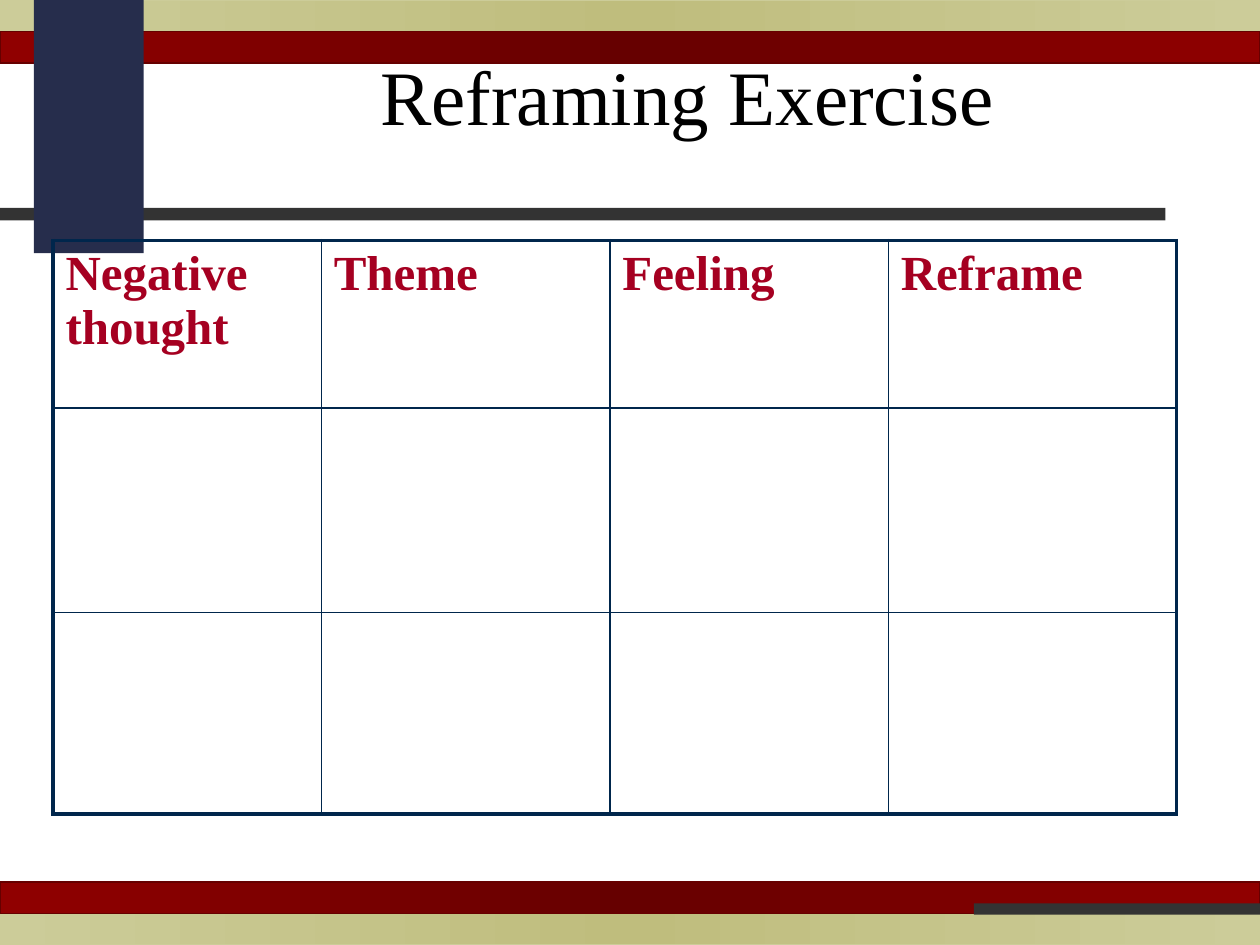
from copy import deepcopy
from lxml import etree
from pptx import Presentation
from pptx.dml.color import RGBColor
from pptx.enum.shapes import MSO_SHAPE
from pptx.enum.text import MSO_ANCHOR
from pptx.oxml.ns import qn
from pptx.util import Inches, Pt

RECTANGLE = MSO_SHAPE.RECTANGLE
BOTTOM = MSO_ANCHOR.BOTTOM
BLACK = RGBColor(0x00, 0x00, 0x00)
CHARCOAL = RGBColor(0x33, 0x33, 0x33)
NAVY = RGBColor(0x26, 0x2D, 0x4C)
BORDER = RGBColor(0x00, 0x26, 0x4C)
CRIMSON = RGBColor(0xA5, 0x00, 0x21)
SAND = RGBColor(0xCC, 0xCC, 0x99)
OLIVE = RGBColor(0xBF, 0xBD, 0x7D)
RED = RGBColor(0x90, 0x00, 0x00)
MAROON = RGBColor(0x66, 0x00, 0x00)

WIDTH, HEIGHT = 10, 7.5
BAND = HEIGHT / 30
FONT = "Times New Roman"
TITLE = "Reframing Exercise"
HEADINGS = ["Negative thought", "Theme", "Feeling", "Reframe"]
COLUMNS = [2.13, 2.29, 2.21, 2.29]
ROWS = [1.33, 1.62, 1.6]
TABLE_LEFT, TABLE_TOP = 0.42, 1.91
OUTER, INNER = 2.25, 1

BANDS = [
    (0, SAND, OLIVE, SAND),
    (BAND, RED, MAROON, MAROON),
    (HEIGHT - BAND, SAND, OLIVE, SAND),
    (HEIGHT - 2 * BAND, RED, MAROON, MAROON),
]
BLOCKS = [
    (0, 1.65, 9.25, 0.1, CHARCOAL),
    (0.27, 0, 0.87, 2.01, NAVY),
    (7.73, 7.17, 2.27, 0.09, CHARCOAL),
]


def add_rectangle(page, left, top, width, height):
    shape = page.shapes.add_shape(
        RECTANGLE, Inches(left), Inches(top), Inches(width), Inches(height))
    shape.shadow.inherit = False
    return shape


def add_band(page, top, edge, middle, outline):
    band = add_rectangle(page, 0, top, WIDTH, BAND)
    band.fill.gradient()
    band.fill.gradient_angle = 0
    stop_list = band._element.spPr.find(qn("a:gradFill")).find(qn("a:gsLst"))
    stop_list.insert(1, deepcopy(stop_list[0]))
    for stop, position, color in zip(
            band.fill.gradient_stops, (0, 0.5, 1), (edge, middle, edge)):
        stop.position = position
        stop.color.rgb = color
    band.line.color.rgb = outline
    band.line.width = Pt(0.75)


def write(frame, text, size, color, bold=False):
    span = frame.paragraphs[0].add_run()
    span.text = text
    span.font.name = FONT
    span.font.size = Pt(size)
    span.font.bold = bold
    span.font.color.rgb = color


def set_borders(cell, widths):
    properties = cell._tc.get_or_add_tcPr()
    for index, (side, width) in enumerate(widths.items()):
        line = etree.Element(qn(f"a:ln{side}"), w=str(Pt(width)))
        fill = etree.SubElement(line, qn("a:solidFill"))
        etree.SubElement(fill, qn("a:srgbClr"), val=str(BORDER))
        properties.insert(index, line)


def add_grid(page):
    table = page.shapes.add_table(
        len(ROWS), len(COLUMNS), Inches(TABLE_LEFT), Inches(TABLE_TOP),
        Inches(sum(COLUMNS)), Inches(sum(ROWS))).table
    table.first_row = table.horz_banding = False
    for column, width in zip(table.columns, COLUMNS):
        column.width = Inches(width)
    for row, height in zip(table.rows, ROWS):
        row.height = Inches(height)
    last_row, last_column = len(ROWS) - 1, len(COLUMNS) - 1
    for r, row in enumerate(table.rows):
        for c, cell in enumerate(row.cells):
            cell.fill.background()
            set_borders(cell, {
                "L": OUTER if c == 0 else INNER,
                "R": OUTER if c == last_column else INNER,
                "T": OUTER if r == 0 else INNER,
                "B": OUTER if r == last_row else INNER,
            })
    for cell, heading in zip(table.rows[0].cells, HEADINGS):
        write(cell.text_frame, heading, 28, CRIMSON, bold=True)


def main():
    deck = Presentation()
    deck.slide_width, deck.slide_height = Inches(WIDTH), Inches(HEIGHT)
    page = deck.slides.add_slide(deck.slide_layouts[6])
    for band in BANDS:
        add_band(page, *band)
    for *place, color in BLOCKS:
        block = add_rectangle(page, *place)
        block.fill.solid()
        block.fill.fore_color.rgb = color
        block.line.fill.background()
    box = page.shapes.add_textbox(
        Inches(2.92), Inches(0.31), Inches(WIDTH - 2.92), Inches(0.86))
    box.text_frame.word_wrap = True
    box.text_frame.vertical_anchor = BOTTOM
    write(box.text_frame, TITLE, 44, BLACK)
    add_grid(page)
    deck.save("out.pptx")


if __name__ == "__main__":
    main()
